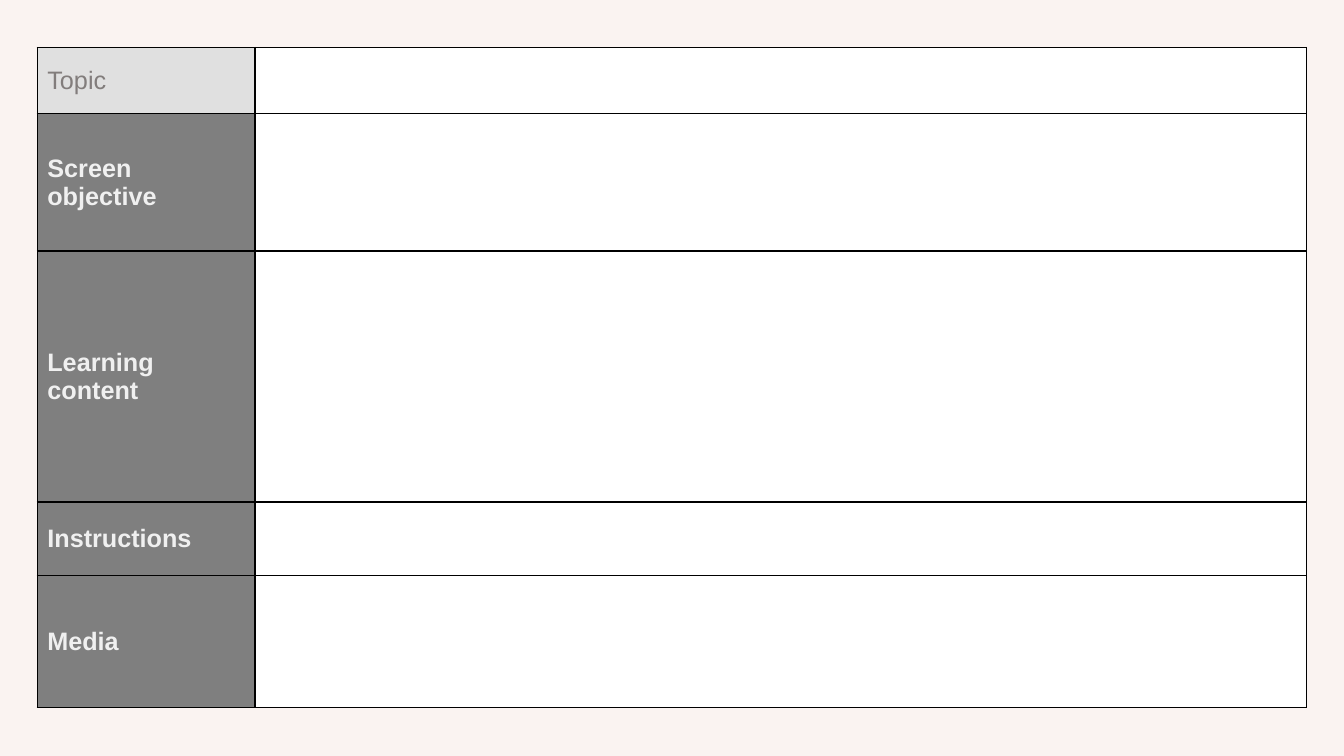
from lxml.etree import SubElement
from pptx import Presentation
from pptx.dml.color import RGBColor
from pptx.enum.text import MSO_ANCHOR
from pptx.oxml.ns import qn
from pptx.util import Inches, Pt

BACKGROUND = "FAF3F1"
BORDER = "000000"
CONTENT_FILL = "FFFFFF"
COLUMN_WIDTHS = [2.16, 10.43]
ROWS = [
    ("Topic", 0.66, "E0E0E0", "827D7C", False),
    ("Screen objective", 1.36, "7F7F7F", "F0F0F0", True),
    ("Learning content", 2.49, "7F7F7F", "F0F0F0", True),
    ("Instructions", 0.73, "7F7F7F", "F0F0F0", True),
    ("Media", 1.31, "7F7F7F", "F0F0F0", True),
]


def set_fill(fill, color):
    fill.solid()
    fill.fore_color.rgb = RGBColor.from_string(color)


def set_borders(cell, color, width):
    properties = cell._tc.get_or_add_tcPr()
    for side in ("a:lnL", "a:lnR", "a:lnT", "a:lnB"):
        line = SubElement(properties, qn(side), w=str(Pt(width)))
        solid_fill = SubElement(line, qn("a:solidFill"))
        SubElement(solid_fill, qn("a:srgbClr"), val=color)


def style_cell(cell, color):
    set_borders(cell, BORDER, 1)
    set_fill(cell.fill, color)
    cell.vertical_anchor = MSO_ANCHOR.MIDDLE
    cell.margin_left = cell.margin_right = Inches(0.1)
    cell.margin_top = cell.margin_bottom = Inches(0.05)


def write_label(cell, label, color, bold):
    cell.text_frame.text = label
    font = cell.text_frame.paragraphs[0].runs[0].font
    font.name = "Arial"
    font.size = Pt(18)
    font.bold = bold
    set_fill(font.fill, color)


def add_storyboard_table(slide, left, top):
    width = sum(COLUMN_WIDTHS)
    height = sum(row[1] for row in ROWS)
    table = slide.shapes.add_table(
        len(ROWS), len(COLUMN_WIDTHS),
        Inches(left), Inches(top), Inches(width), Inches(height),
    ).table
    table.first_row = False
    table.horz_banding = False
    for column, column_width in zip(table.columns, COLUMN_WIDTHS):
        column.width = Inches(column_width)
    for row, (label, row_height, fill, color, bold) in zip(table.rows, ROWS):
        row.height = Inches(row_height)
        label_cell, content_cell = row.cells
        style_cell(label_cell, fill)
        style_cell(content_cell, CONTENT_FILL)
        write_label(label_cell, label, color, bold)


def main():
    presentation = Presentation()
    presentation.slide_width = Inches(13.33)
    presentation.slide_height = Inches(7.5)
    slide = presentation.slides.add_slide(presentation.slide_layouts[6])
    set_fill(slide.background.fill, BACKGROUND)
    add_storyboard_table(slide, 0.37, 0.47)
    presentation.save("out.pptx")


if __name__ == "__main__":
    main()
